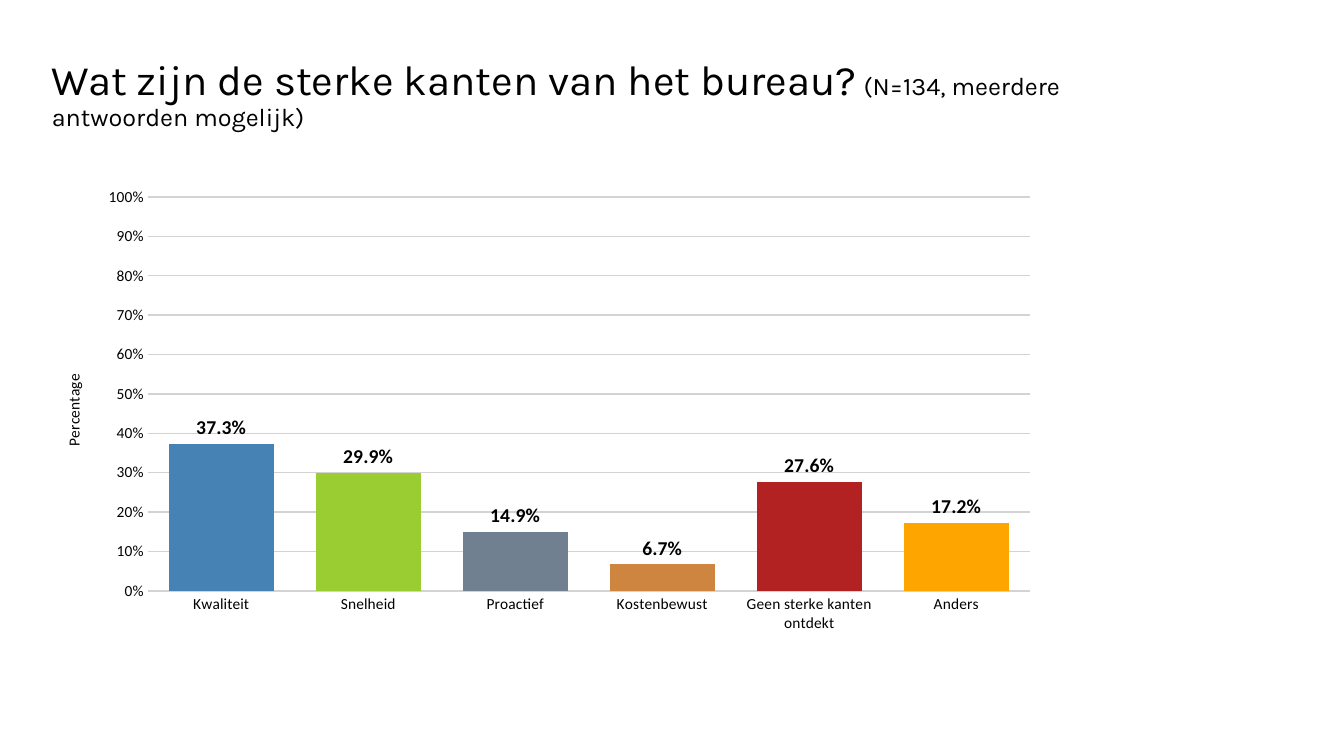
import pptx
import pptx.chart.data
import pptx.dml.color
import pptx.enum.chart
import pptx.enum.text
import pptx.oxml
import pptx.oxml.ns
import pptx.util

Pt = pptx.util.Pt
ec = pptx.enum.chart

TITLE = [("Wat zijn de sterke kanten van het bureau?", 30),
         (" (N=134, meerdere antwoorden mogelijk)", 18)]
BARS = [("Kwaliteit", 0.373, "4682B4"),
        ("Snelheid", 0.299, "9ACD32"),
        ("Proactief", 0.149, "708090"),
        ("Kostenbewust", 0.067, "CD853F"),
        ("Geen sterke kanten ontdekt", 0.276, "B22222"),
        ("Anders", 0.172, "FFA500")]
AXIS_TITLE = "Percentage"
PLOT = {"x": 0.105, "y": 0.04, "w": 0.875, "h": 0.85}
BLACK, WHITE, GRID = "000000", "FFFFFF", "D3D3D3"


def rgb(value):
    return pptx.dml.color.RGBColor.from_string(value)


def set_font(font, size, name="Calibri", bold=False, color=BLACK):
    font.size = Pt(size)
    font.name = name
    font.bold = bold
    font.color.rgb = rgb(color)


def add_run(p, text, **fmt):
    r = p.add_run()
    r.text = text
    set_font(r.font, **fmt)


def set_fill(fill, color):
    fill.solid()
    fill.fore_color.rgb = rgb(color)


def style_plot_area(chart):
    area = chart._chartSpace.chart.plotArea
    for old in area.findall(pptx.oxml.ns.qn("c:layout")):
        area.remove(old)
    ns = pptx.oxml.ns.nsdecls("c", "a")
    sizes = "".join(f'<c:{k} val="{v}"/>' for k, v in PLOT.items())
    area.insert(0, pptx.oxml.parse_xml(
        f'<c:layout {ns}><c:manualLayout><c:layoutTarget val="inner"/>'
        f'<c:xMode val="edge"/><c:yMode val="edge"/>{sizes}'
        '</c:manualLayout></c:layout>'))
    area.append(pptx.oxml.parse_xml(
        f'<c:spPr {ns}><a:solidFill><a:srgbClr val="{WHITE}"/></a:solidFill></c:spPr>'))


def add_title(s):
    sp = s.shapes.add_textbox(Pt(30), Pt(16), Pt(828), Pt(104))
    tf = sp.text_frame
    tf.word_wrap = True
    tf.vertical_anchor = pptx.enum.text.MSO_ANCHOR.MIDDLE
    p = tf.paragraphs[0]
    p.line_spacing = 0.9
    for text, size in TITLE:
        add_run(p, text, size=size, name="Karla")


def add_bars(s):
    names, values, colors = zip(*BARS)
    data = pptx.chart.data.CategoryChartData()
    data.categories = names
    data.add_series("Series 1", values)
    chart = s.shapes.add_chart(ec.XL_CHART_TYPE.COLUMN_CLUSTERED,
                               Pt(30), Pt(127.5), Pt(720), Pt(331), data).chart
    chart.has_legend = chart.has_title = False
    set_font(chart.font, 11)
    style_plot_area(chart)

    for axis in (chart.category_axis, chart.value_axis):
        axis.major_tick_mark = ec.XL_TICK_MARK.INSIDE
        axis.format.line.fill.background()
    axis = chart.value_axis
    axis.minimum_scale, axis.maximum_scale, axis.major_unit = 0, 1, 0.1
    axis.tick_labels.number_format = "0%"
    axis.tick_labels.number_format_is_linked = False
    grid = axis.major_gridlines.format.line
    grid.width = Pt(1)
    grid.color.rgb = rgb(GRID)
    add_run(axis.axis_title.text_frame.paragraphs[0], AXIS_TITLE, size=11)

    plot = chart.plots[0]
    plot.gap_width = 40
    plot.vary_by_categories = False
    series = plot.series[0]
    set_fill(series.format.fill, colors[0])
    for i, color in enumerate(colors[1:], 1):
        set_fill(series.points[i].format.fill, color)
    labels = series.data_labels
    labels.show_value = True
    labels.position = ec.XL_LABEL_POSITION.OUTSIDE_END
    labels.number_format = "0.0%"
    labels.number_format_is_linked = False
    set_font(labels.font, 14, bold=True)


def main():
    prs = pptx.Presentation()
    prs.slide_width, prs.slide_height = Pt(960), Pt(540)
    s = prs.slides.add_slide(prs.slide_layouts[6])
    set_fill(s.background.fill, WHITE)
    add_title(s)
    add_bars(s)
    prs.save("out.pptx")


if __name__ == "__main__":
    main()
